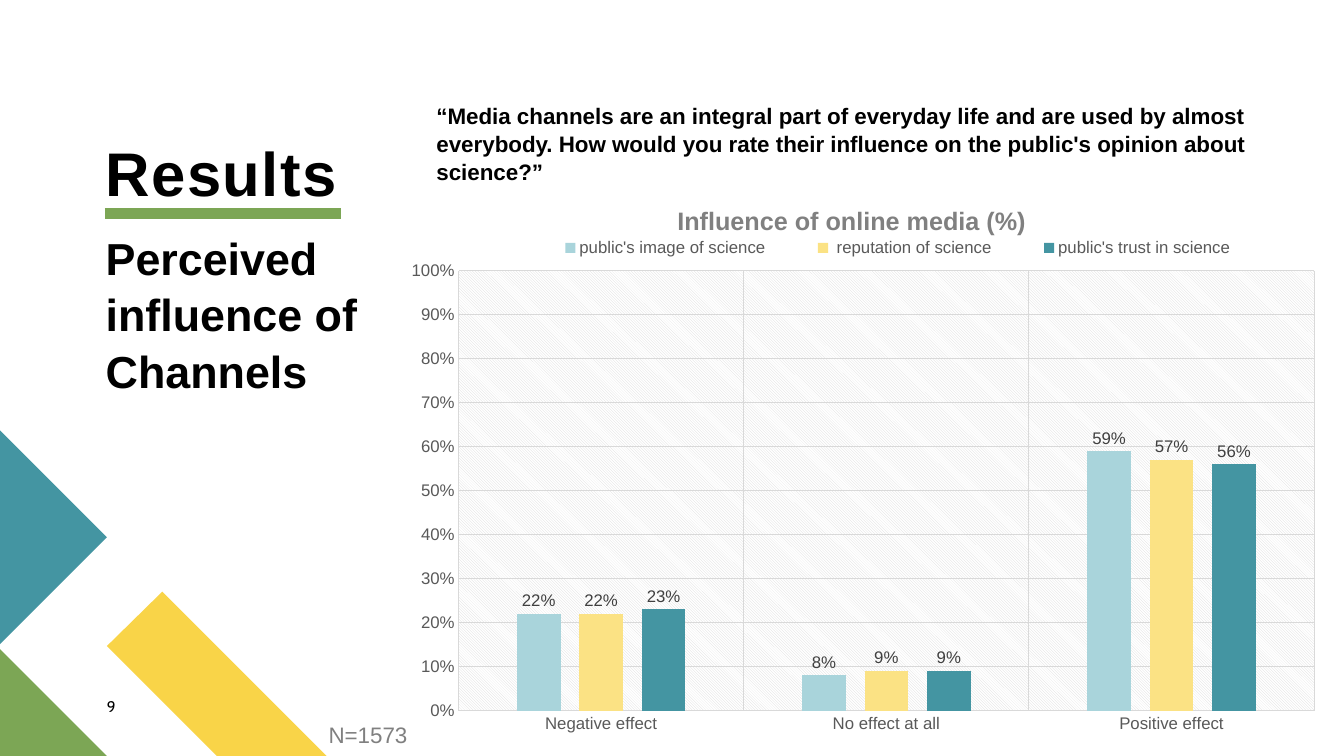
from lxml import etree
from pptx import Presentation
from pptx.chart.data import CategoryChartData
from pptx.dml.color import RGBColor
from pptx.enum.chart import XL_CHART_TYPE, XL_LABEL_POSITION, XL_LEGEND_POSITION, XL_TICK_MARK
from pptx.enum.shapes import MSO_CONNECTOR
from pptx.enum.text import MSO_ANCHOR, PP_ALIGN
from pptx.oxml import parse_xml
from pptx.oxml.ns import nsdecls, qn
from pptx.util import Inches, Pt

CLUSTERED = XL_CHART_TYPE.COLUMN_CLUSTERED
OUTSIDE_END = XL_LABEL_POSITION.OUTSIDE_END
LEGEND_BOTTOM = XL_LEGEND_POSITION.BOTTOM
NO_TICK = XL_TICK_MARK.NONE
STRAIGHT = MSO_CONNECTOR.STRAIGHT
TOP, BOTTOM = MSO_ANCHOR.TOP, MSO_ANCHOR.BOTTOM
LEFT = PP_ALIGN.LEFT

COLORS = {
    "white": "FFFFFF", "black": "000000", "teal": "4495A2", "green": "7CA655",
    "yellow": "F9D448", "pale_teal": "A9D4DB", "pale_yellow": "FBE284",
    "grid": "D9D9D9", "axis": "595959", "label": "404040", "gray": "808080",
}
CATEGORIES = ["Negative effect", "No effect at all", "Positive effect"]
SERIES = [
    ("public's image of science", [0.22, 0.08, 0.59], "pale_teal"),
    (" reputation of science", [0.22, 0.09, 0.57], "pale_yellow"),
    ("public's trust in science", [0.23, 0.09, 0.56], "teal"),
]
QUOTE = (
    "“Media channels are an integral part of everyday life and are used by almost "
    "everybody. How would you rate their influence on the public's opinion about science?”"
)


def rgb(name):
    return RGBColor.from_string(COLORS[name])


def format_font(font, size, color, bold=False, name="Arial"):
    font.name = name
    font.size = Pt(size)
    font.bold = bold
    font.color.rgb = rgb(color)


def place(shape, box):
    shape.left, shape.top, shape.width, shape.height = (Inches(value) for value in box)


def write_text(shape, text, size, color="black", bold=False, name="Arial",
               anchor=TOP, inset=None, line_spacing=None, tracking=None):
    frame = shape.text_frame
    frame.word_wrap = True
    frame.vertical_anchor = anchor
    if inset is not None:
        frame.margin_left = frame.margin_top = Inches(inset)
        frame.margin_right = frame.margin_bottom = Inches(inset)
    paragraph = frame.paragraphs[0]
    paragraph.alignment = LEFT
    if line_spacing:
        paragraph.line_spacing = line_spacing
    run = paragraph.add_run()
    run.text = text
    format_font(run.font, size, color, bold, name)
    if tracking:
        run.font._element.set("spc", str(tracking * 100))


def add_text(slide, box, text, **text_format):
    shape = slide.shapes.add_textbox(*(Inches(value) for value in box))
    write_text(shape, text, **text_format)


def add_polygon(slide, points, color):
    corners = [(Inches(x), Inches(y)) for x, y in points]
    builder = slide.shapes.build_freeform(*corners[0], scale=1.0)
    builder.add_line_segments(corners[1:], close=True)
    shape = builder.convert_to_shape()
    shape.shadow.inherit = False
    shape.fill.solid()
    shape.fill.fore_color.rgb = rgb(color)
    shape.line.fill.background()


def add_corner_decoration(slide, left, bottom, side):
    tip = left + side
    add_polygon(slide, [(tip + 2.18, bottom), (tip + 1.09, bottom),
                        (tip, bottom - 1.09), (tip + 0.55, bottom - 1.63)], "yellow")
    add_polygon(slide, [(left, bottom - side), (tip, bottom), (left, bottom)], "green")
    middle = bottom - 2.17
    add_polygon(slide, [(left, middle - side), (tip, middle), (left, middle + side)], "teal")


def add_heading(slide, left, top):
    connector = slide.shapes.add_connector(
        STRAIGHT, Inches(left), Inches(top + 0.71), Inches(left + 2.34), Inches(top + 0.71))
    connector.line.color.rgb = rgb("green")
    connector.line.width = Pt(8)
    etree.SubElement(connector._element.spPr, qn("a:effectLst"))
    title = slide.shapes.title
    place(title, (left + 0.01, top, 5.4, 0.67))
    write_text(title, "Results", size=44, bold=True, anchor=BOTTOM, inset=0,
               line_spacing=0.9, tracking=1)
    add_text(slide, (left - 0.09, top + 0.8, 3.04, 1.72), "Perceived influence of Channels",
             size=32, bold=True, line_spacing=1.05)


def manual_layout(x, y, width, height, inner=False):
    target = '<c:layoutTarget val="inner"/>' if inner else ""
    return parse_xml(
        f'<c:layout {nsdecls("c")}><c:manualLayout>{target}'
        '<c:xMode val="edge"/><c:yMode val="edge"/>'
        f'<c:x val="{x}"/><c:y val="{y}"/><c:w val="{width}"/><c:h val="{height}"/>'
        '</c:manualLayout></c:layout>')


def fill_plot_area(chart):
    plot_area = chart.element.find(".//" + qn("c:plotArea"))
    for layout in plot_area.findall(qn("c:layout")):
        plot_area.remove(layout)
    plot_area.insert(0, manual_layout(0.075, 0.153, 0.925, 0.768, inner=True))
    plot_area.append(parse_xml(
        f'<c:spPr {nsdecls("c", "a")}><a:pattFill prst="ltDnDiag">'
        f'<a:fgClr><a:srgbClr val="{COLORS["grid"]}"/></a:fgClr>'
        f'<a:bgClr><a:srgbClr val="{COLORS["white"]}"/></a:bgClr>'
        '</a:pattFill><a:ln><a:noFill/></a:ln></c:spPr>'))


def format_axis(axis):
    axis.major_tick_mark = axis.minor_tick_mark = NO_TICK
    axis.has_major_gridlines = True
    axis.major_gridlines.format.line.color.rgb = rgb("grid")
    axis.major_gridlines.format.line.width = Pt(0.75)
    format_font(axis.tick_labels.font, 12, "axis")


def format_axes(chart):
    category_axis, value_axis = chart.category_axis, chart.value_axis
    format_axis(category_axis)
    category_axis.format.line.color.rgb = rgb("grid")
    category_axis.format.line.width = Pt(0.75)
    format_axis(value_axis)
    value_axis.format.line.fill.background()
    value_axis.minimum_scale, value_axis.maximum_scale = 0, 1
    value_axis.major_unit = 0.1
    value_axis.tick_labels.number_format = "0%"
    value_axis.tick_labels.number_format_is_linked = False


def format_series(series, color):
    series.format.fill.solid()
    series.format.fill.fore_color.rgb = rgb(color)
    series.invert_if_negative = False
    labels = series.data_labels
    labels.show_value = True
    labels.position = OUTSIDE_END
    labels.number_format = "0%"
    labels.number_format_is_linked = False
    format_font(labels.font, 12, "label")


def add_influence_chart(slide, box):
    data = CategoryChartData(number_format="0%")
    data.categories = CATEGORIES
    for name, values, _ in SERIES:
        data.add_series(name, values)
    frame = slide.shapes.add_chart(CLUSTERED, *(Inches(value) for value in box), data)
    chart = frame.chart
    format_font(chart.font, 10, "axis")
    chart.has_title = True
    run = chart.chart_title.text_frame.paragraphs[0].add_run()
    run.text = "Influence of online media (%)"
    format_font(run.font, 18, "gray", bold=True)
    chart.has_legend = True
    chart.legend.position = LEGEND_BOTTOM
    chart.legend.include_in_layout = False
    format_font(chart.legend.font, 12, "axis")
    chart.legend._element.find(qn("c:legendPos")).addnext(manual_layout(0.14, 0.085, 0.82, 0.055))
    plot = chart.plots[0]
    plot.gap_width, plot.overlap = 267, -43
    plot.vary_by_categories = False
    for series, (_, _, color) in zip(plot.series, SERIES):
        format_series(series, color)
    format_axes(chart)
    fill_plot_area(chart)


def build_results_slide(presentation):
    slide = presentation.slides.add_slide(presentation.slide_layouts[5])
    add_corner_decoration(slide, 0, 7.5, 1.06)
    add_heading(slide, 1.04, 1.41)
    add_text(slide, (1.06, 6.92, 0.57, 0.27), "9", size=11, name="Cabin", inset=0)
    add_text(slide, (4.23, 0.95, 8.44, 0.91), QUOTE, size=16, bold=True, line_spacing=1.05)
    add_influence_chart(slide, (3.86, 1.82, 9.18, 5.68))
    add_text(slide, (3.16, 7.11, 1.18, 0.37), "N=1573", size=16, color="gray")


def main():
    presentation = Presentation()
    presentation.slide_width, presentation.slide_height = Inches(13.33), Inches(7.5)
    build_results_slide(presentation)
    presentation.save("out.pptx")


if __name__ == "__main__":
    main()
